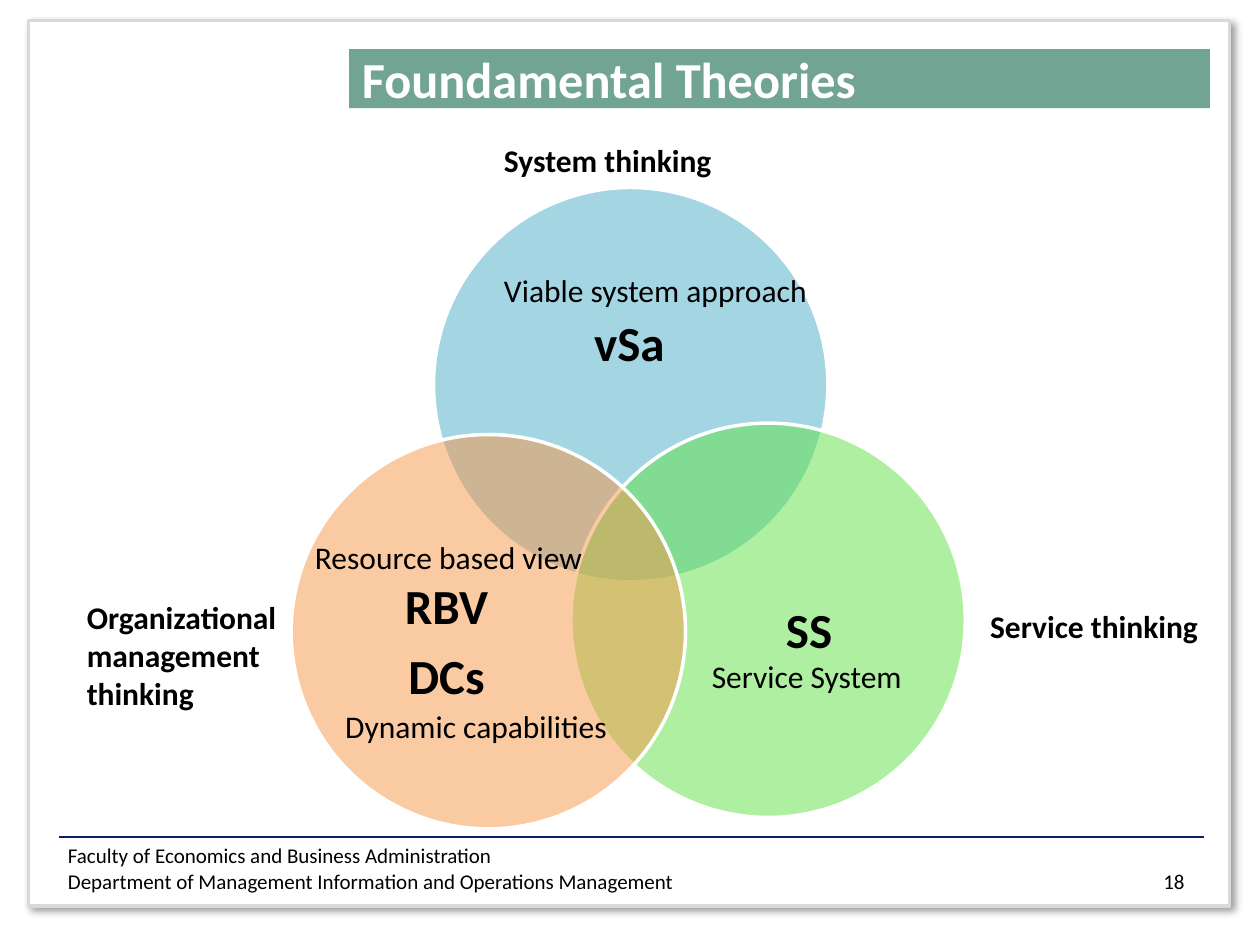
from lxml.etree import SubElement as Sub
from pptx import Presentation
from pptx.dml.color import RGBColor
from pptx.enum.shapes import MSO_CONNECTOR as Conn, MSO_SHAPE as Kind
from pptx.enum.text import MSO_ANCHOR as Anchor, MSO_AUTO_SIZE as Fit, PP_ALIGN as Align
from pptx.oxml.ns import qn
from pptx.util import Cm, Pt

FONT = "Calibri"
INK = "000000"
WHITE = "FFFFFF"


def paint(part, tint):
    """Give a fill, line or font format a solid hex colour."""
    if hasattr(part, "solid"):
        part.solid()
        part = part.fore_color
    else:
        part = part.color
    part.rgb = RGBColor.from_string(tint)


def write(frame, lines, size, bold=False, tint=INK, align=Align.LEFT):
    """Fill a text frame with one paragraph and run per line."""
    frame.word_wrap = True
    frame.auto_size = Fit.NONE
    for i, line in enumerate(lines):
        para = frame.add_paragraph() if i else frame.paragraphs[0]
        para.alignment = align
        run = para.add_run()
        run.text = line
        run.font.name = FONT
        run.font.size = Pt(size)
        run.font.bold = bold
        paint(run.font, tint)


def note(slide, box, lines, size, **style):
    """Add a text box and return its frame."""
    frame = slide.shapes.add_textbox(*map(Cm, box)).text_frame
    write(frame, lines, size, **style)
    return frame


def shape(slide, kind, box, fill, line):
    """Add a flat preset shape with a two point outline."""
    item = slide.shapes.add_shape(kind, *map(Cm, box))
    item.shadow.inherit = False
    paint(item.fill, fill)
    paint(item.line, line)
    item.line.width = Pt(2)
    return item


def panel(slide, box):
    """Draw the page frame with its soft shadow."""
    item = shape(slide, Kind.RECTANGLE, box, WHITE, "D9D9D9")
    glow = Sub(item._element.spPr.find(qn("a:effectLst")), qn("a:outerShdw"),
               blurRad=str(Pt(4)), dist=str(Pt(3)), dir="2700000",
               algn="tl", rotWithShape="0")
    Sub(Sub(glow, qn("a:srgbClr"), val=INK), qn("a:alpha"), val="40000")


def head(slide, box, text):
    """Place the title bar in front of the panel."""
    title = slide.shapes.title
    slide.shapes._spTree.append(title._element)
    title.left, title.top, title.width, title.height = map(Cm, box)
    paint(title.fill, "72A493")
    write(title.text_frame, [text], 28.8, bold=True, tint=WHITE)
    title.text_frame.vertical_anchor = Anchor.MIDDLE


def foot(slide, box, lines, page):
    """Draw the footer rule, the department lines and the page number."""
    x, y, w, h = box
    rule = slide.shapes.add_connector(Conn.STRAIGHT, Cm(x), Cm(y), Cm(x + w), Cm(y))
    paint(rule.line, "0A1E60")
    rule.line.width = Pt(1.5)
    Sub(rule._element.spPr, qn("a:effectLst"))
    note(slide, (x - 0.07, y, 18.5, h), lines, 12)
    note(slide, (x + w - 4.55, y + 0.52, 4.4, h - 0.52), [page], 12, align=Align.RIGHT)


def disc(slide, box, tint, inner, lines):
    """Draw a half clear circle and its key terms, offset from its corner."""
    x, y = box[:2]
    item = shape(slide, Kind.OVAL, box, tint, WHITE)
    fill = item._element.spPr.find(qn("a:solidFill"))
    Sub(fill[0], qn("a:alpha"), val="50000")
    dx, dy, w, h = inner
    frame = note(slide, (x + dx, y + dy, w, h), lines, 28, bold=True, align=Align.CENTER)
    frame.vertical_anchor = Anchor.MIDDLE
    frame.margin_left = frame.margin_right = frame.margin_top = frame.margin_bottom = 0
    for para in frame.paragraphs:
        para.line_spacing = 0.9
        para.space_after = Pt(9.8)


def venn(slide, box):
    """Draw the three circles with their inner and outer labels."""
    x, y = box[:2]
    size = 7.95
    discs = (
        (2.87, 0, "4BACC6", (1.04, 1.4, 5.82, 3.58), ["vSa"]),
        (5.64, 4.75, "60E146", (2.41, 2.03, 4.78, 4.37), ["SS"]),
        (0, 4.98, "F79646", (0.74, 2.03, 4.78, 4.37), ["RBV", "DCs"]),
    )
    for dx, dy, tint, inner, lines in discs:
        disc(slide, (x + dx, y + dy, size, size), tint, inner, lines)
    tags = (
        (4.04, -1.06, 5.41, "System thinking", True),
        (13.84, 8.34, 5.41, "Service thinking", True),
        (-4.37, 8.15, 5.41, "Organizational management thinking", True),
        (0.23, 6.94, 7.39, "Resource based view", False),
        (0.84, 10.34, 7.39, "Dynamic capabilities", False),
        (8.23, 9.35, 7.39, "Service System", False),
        (4.04, 1.55, 8.2, "Viable system approach", False),
    )
    for dx, dy, w, text, bold in tags:
        note(slide, (x + dx, y + dy, w, 1.02), [text], 18, bold=bold)


def main():
    """Build and save the slide."""
    deck = Presentation()
    deck.slide_width, deck.slide_height = Cm(25.4), Cm(19.05)
    slide = deck.slides.add_slide(deck.slide_layouts[5])
    panel(slide, (0.58, 0.41, 24.21, 17.86))
    foot(slide, (1.19, 16.87, 23.09, 1.27),
         ["Faculty of Economics and Business Administration",
          "Department of Management Information and Operations Management"], "18")
    head(slide, (7.04, 0.99, 17.35, 1.19), "Foundamental Theories")
    venn(slide, (5.87, 3.78, 13.59, 12.93))
    deck.save("out.pptx")


if __name__ == "__main__":
    main()
